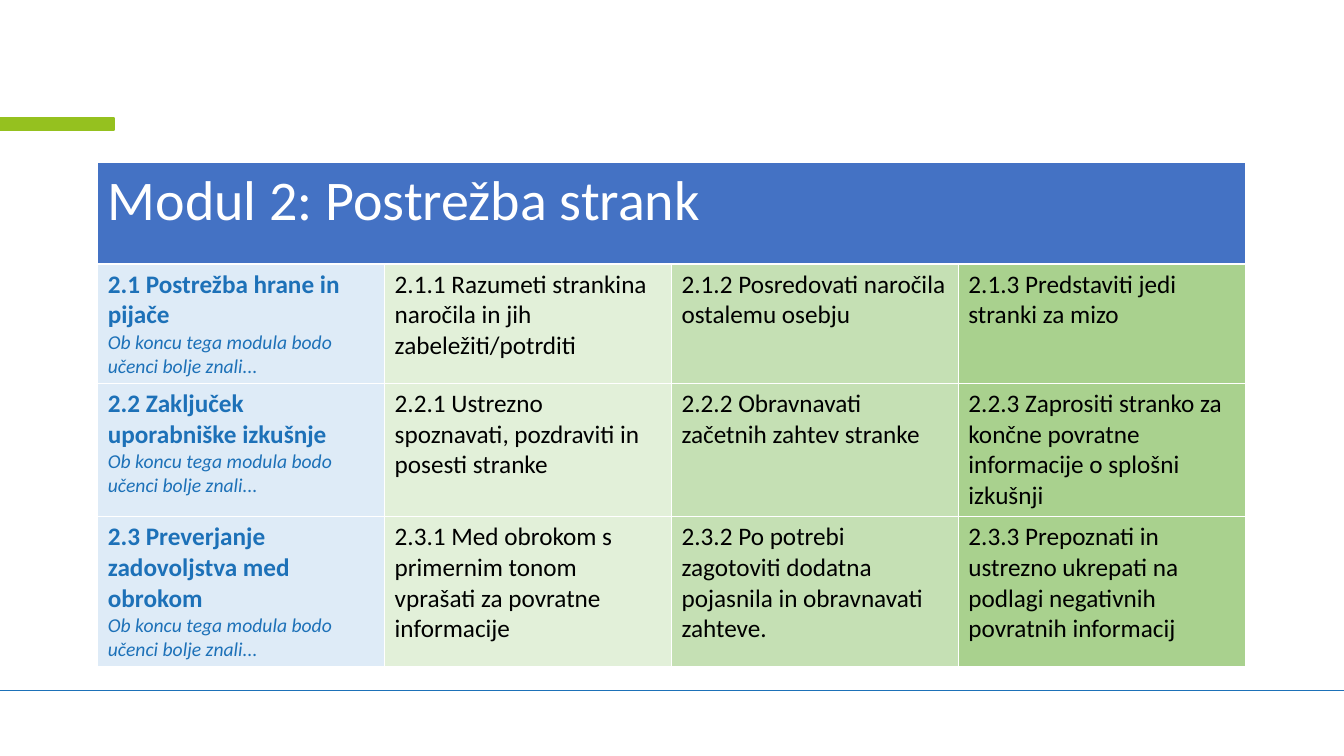
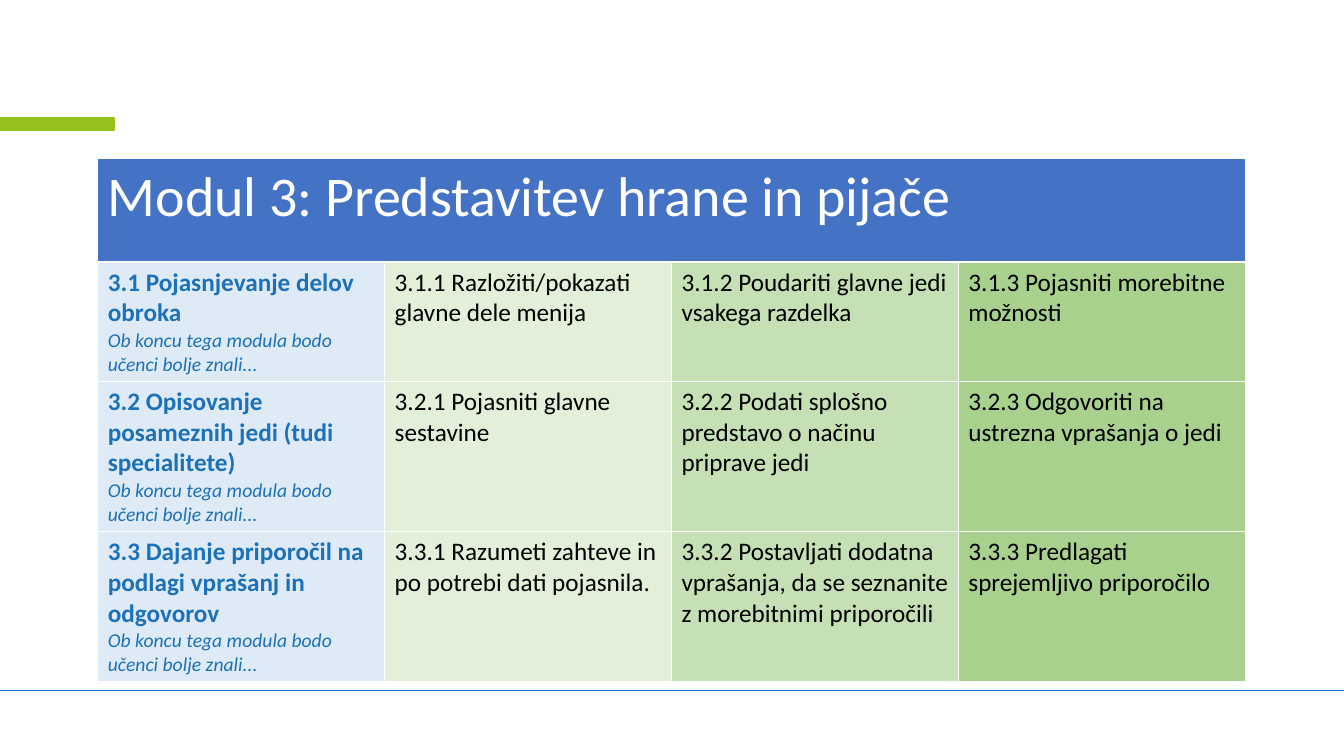
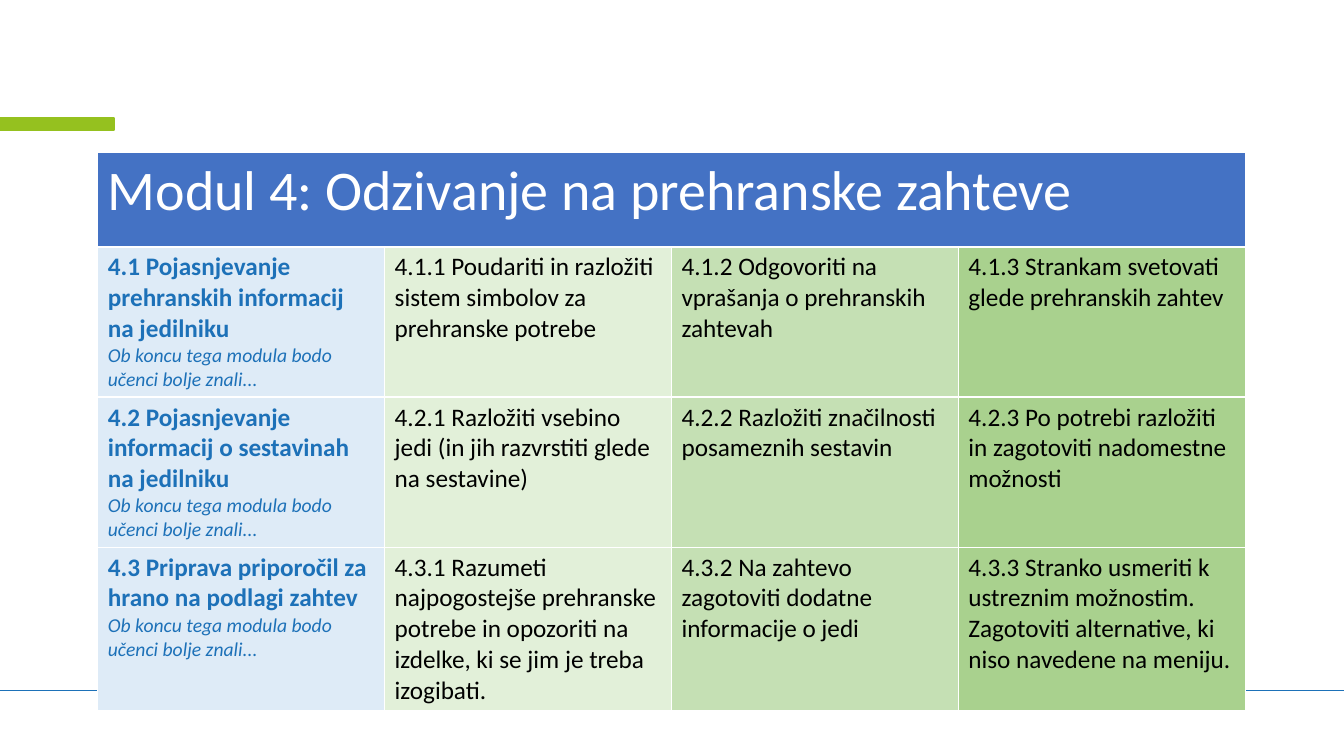
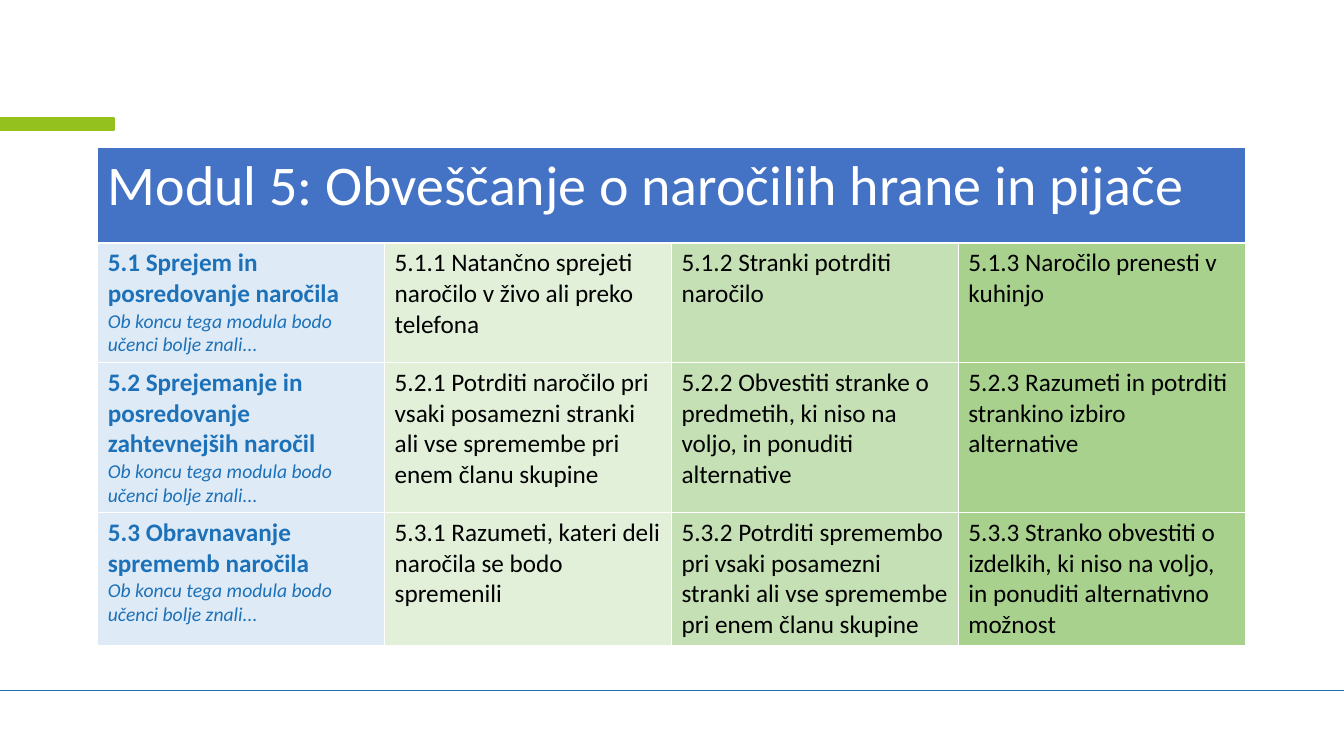
from pptx import Presentation
from pptx.dml.color import RGBColor
from pptx.enum.shapes import MSO_CONNECTOR, MSO_SHAPE
from pptx.util import Inches, Pt
from lxml import etree

BLUE = RGBColor(0x1D, 0x71, 0xB8)
LIME = RGBColor(0x95, 0xC1, 0x1F)
HEADER_BLUE = RGBColor(0x44, 0x72, 0xC4)
PALE_BLUE = RGBColor(0xDE, 0xEB, 0xF7)
WHITE = RGBColor(0xFF, 0xFF, 0xFF)
BLACK = RGBColor(0, 0, 0)
SKILL_GREENS = [
    RGBColor(0xE2, 0xF0, 0xD9),
    RGBColor(0xC5, 0xE0, 0xB4),
    RGBColor(0xA9, 0xD1, 0x8E),
]
FONT = "Calibri"
OUTCOME = "Ob koncu tega modula bodo učenci bolje znali..."

SLIDE_WIDTH = Inches(13.33)
TABLE_LEFT = Inches(0.97)
COLUMN_WIDTH = Inches(2.845)
UNIT_HEIGHT = Inches(1.16)

# Module number, title, table top, header height, units with their three skills
MODULES = [
    (2, "Postrežba strank", 1.61, 1.01, [
        ("Postrežba hrane in pijače", [
            "Razumeti strankina naročila in jih zabeležiti/potrditi",
            "Posredovati naročila ostalemu osebju",
            "Predstaviti jedi stranki za mizo"]),
        ("Zaključek uporabniške izkušnje", [
            "Ustrezno spoznavati, pozdraviti in posesti stranke",
            "Obravnavati začetnih zahtev stranke",
            "Zaprositi stranko za končne povratne informacije o splošni izkušnji"]),
        ("Preverjanje zadovoljstva med obrokom", [
            "Med obrokom s primernim tonom vprašati za povratne informacije",
            "Po potrebi zagotoviti dodatna pojasnila in obravnavati zahteve.",
            "Prepoznati in ustrezno ukrepati na podlagi negativnih povratnih informacij"]),
    ]),
    (3, "Predstavitev hrane in pijače", 1.57, 1.03, [
        ("Pojasnjevanje delov obroka", [
            "Razložiti/pokazati glavne dele menija",
            "Poudariti glavne jedi vsakega razdelka",
            "Pojasniti morebitne možnosti"]),
        ("Opisovanje posameznih jedi (tudi specialitete)", [
            "Pojasniti glavne sestavine",
            "Podati splošno predstavo o načinu priprave jedi",
            "Odgovoriti na ustrezna vprašanja o jedi"]),
        ("Dajanje priporočil na podlagi vprašanj in odgovorov", [
            "Razumeti zahteve in po potrebi dati pojasnila.",
            "Postavljati dodatna vprašanja, da se seznanite z morebitnimi priporočili",
            "Predlagati sprejemljivo priporočilo"]),
    ]),
    (4, "Odzivanje na prehranske zahteve", 1.51, 0.94, [
        ("Pojasnjevanje prehranskih informacij na jedilniku", [
            "Poudariti in razložiti sistem simbolov za prehranske potrebe",
            "Odgovoriti na vprašanja o prehranskih zahtevah",
            "Strankam svetovati glede prehranskih zahtev"]),
        ("Pojasnjevanje informacij o sestavinah na jedilniku", [
            "Razložiti vsebino jedi (in jih razvrstiti glede na sestavine)",
            "Razložiti značilnosti posameznih sestavin",
            "Po potrebi razložiti in zagotoviti nadomestne možnosti"]),
        ("Priprava priporočil za hrano na podlagi zahtev", [
            "Razumeti najpogostejše prehranske potrebe in opozoriti na izdelke, "
            "ki se jim je treba izogibati.",
            "Na zahtevo zagotoviti dodatne informacije o jedi",
            "Stranko usmeriti k ustreznim možnostim. Zagotoviti alternative, "
            "ki niso navedene na meniju."]),
    ]),
    (5, "Obveščanje o naročilih hrane in pijače", 1.46, 0.95, [
        ("Sprejem in posredovanje naročila", [
            "Natančno sprejeti naročilo v živo ali preko telefona",
            "Stranki potrditi naročilo",
            "Naročilo prenesti v kuhinjo"]),
        ("Sprejemanje in posredovanje zahtevnejših naročil", [
            "Potrditi naročilo pri vsaki posamezni stranki ali vse spremembe "
            "pri enem članu skupine",
            "Obvestiti stranke o predmetih, ki niso na voljo, in ponuditi alternative",
            "Razumeti in potrditi strankino izbiro alternative"]),
        ("Obravnavanje sprememb naročila", [
            "Razumeti, kateri deli naročila se bodo spremenili",
            "Potrditi spremembo pri vsaki posamezni stranki ali vse spremembe "
            "pri enem članu skupine",
            "Stranko obvestiti o izdelkih, ki niso na voljo, in ponuditi "
            "alternativno možnost"]),
    ]),
]


def add_branded_slide(prs):
    """Add a blank slide with the footer rule and the lime tab."""
    slide = prs.slides.add_slide(prs.slide_layouts[6])
    rule = slide.shapes.add_connector(
        MSO_CONNECTOR.STRAIGHT, 0, Inches(6.85), SLIDE_WIDTH, Inches(6.85))
    rule.line.color.rgb = BLUE
    rule.line.width = Pt(1)
    properties = rule.element.spPr
    namespace = properties.nsmap["a"]
    etree.SubElement(properties, f"{{{namespace}}}effectLst")

    tab = slide.shapes.add_shape(
        MSO_SHAPE.RECTANGLE, 0, Inches(1.17), Inches(1.13), Inches(0.12))
    tab.shadow.inherit = False
    tab.fill.solid()
    tab.fill.fore_color.rgb = LIME
    tab.line.color.rgb = LIME
    tab.line.width = Pt(1)
    return slide


def fill_cell(cell, fill, color, lines):
    """Write (text, size, bold, italic) lines as paragraphs on a solid fill."""
    cell.fill.solid()
    cell.fill.fore_color.rgb = fill
    cell.text_frame.text = "\n".join(line[0] for line in lines)
    for paragraph, (_, size, bold, italic) in zip(cell.text_frame.paragraphs, lines):
        font = paragraph.runs[0].font
        font.name = FONT
        font.size = Pt(size)
        font.bold = bold
        font.italic = italic
        font.color.rgb = color


prs = Presentation()
prs.slide_width = SLIDE_WIDTH
prs.slide_height = Inches(7.5)

for module, title, top, header_height, units in MODULES:
    slide = add_branded_slide(prs)
    table = slide.shapes.add_table(
        len(units) + 1, 4, TABLE_LEFT, Inches(top), 4 * COLUMN_WIDTH,
        Inches(header_height) + len(units) * UNIT_HEIGHT).table
    table.horz_banding = False
    for column in table.columns:
        column.width = COLUMN_WIDTH
    for row in table.rows:
        row.height = UNIT_HEIGHT
    table.rows[0].height = Inches(header_height)

    header = table.cell(0, 0)
    header.merge(table.cell(0, 3))
    fill_cell(header, HEADER_BLUE, WHITE,
              [(f"Modul {module}: {title}", 40, False, False)])

    for unit, (unit_title, skills) in enumerate(units, start=1):
        fill_cell(table.cell(unit, 0), PALE_BLUE, BLUE, [
            (f"{module}.{unit} {unit_title}", 18, True, False),
            (OUTCOME, 14, False, True)])
        for number, (skill, green) in enumerate(zip(skills, SKILL_GREENS), start=1):
            fill_cell(table.cell(unit, number), green, BLACK, [
                (f"{module}.{unit}.{number} {skill}", 18, False, False)])

prs.save("out.pptx")
